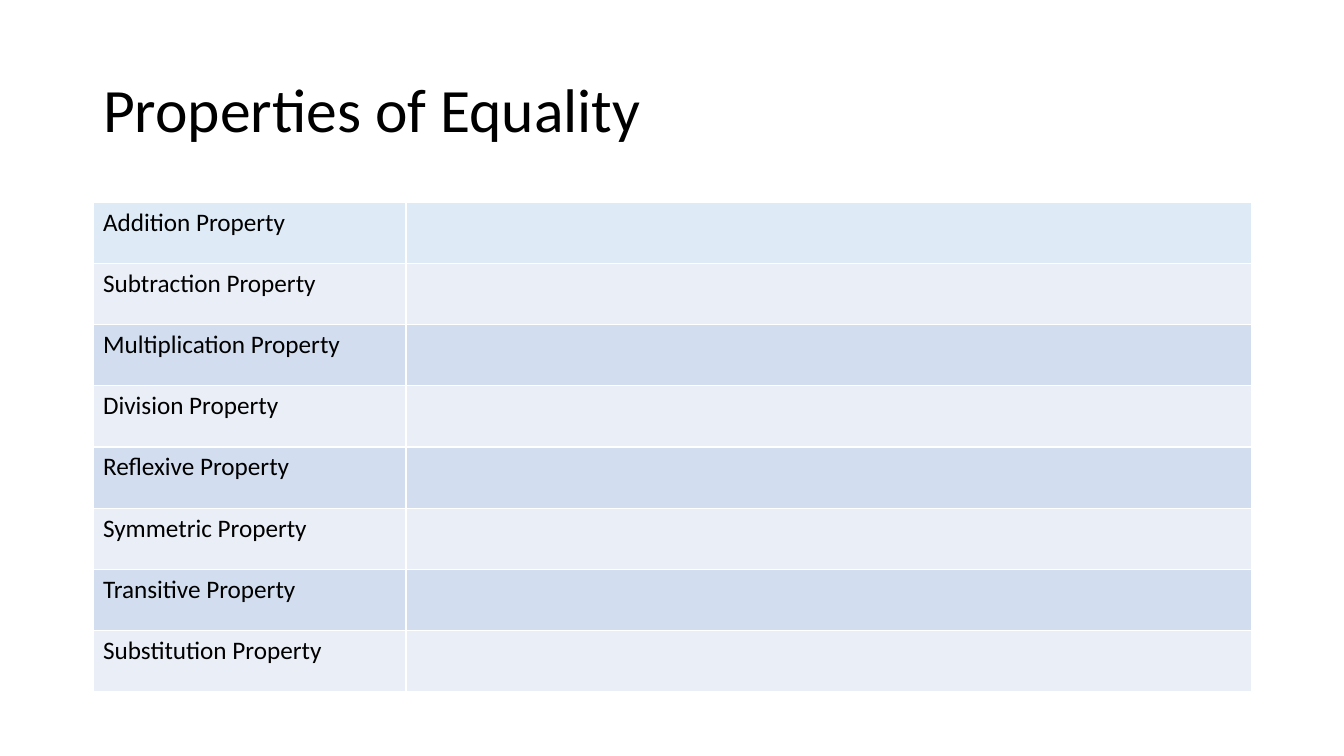
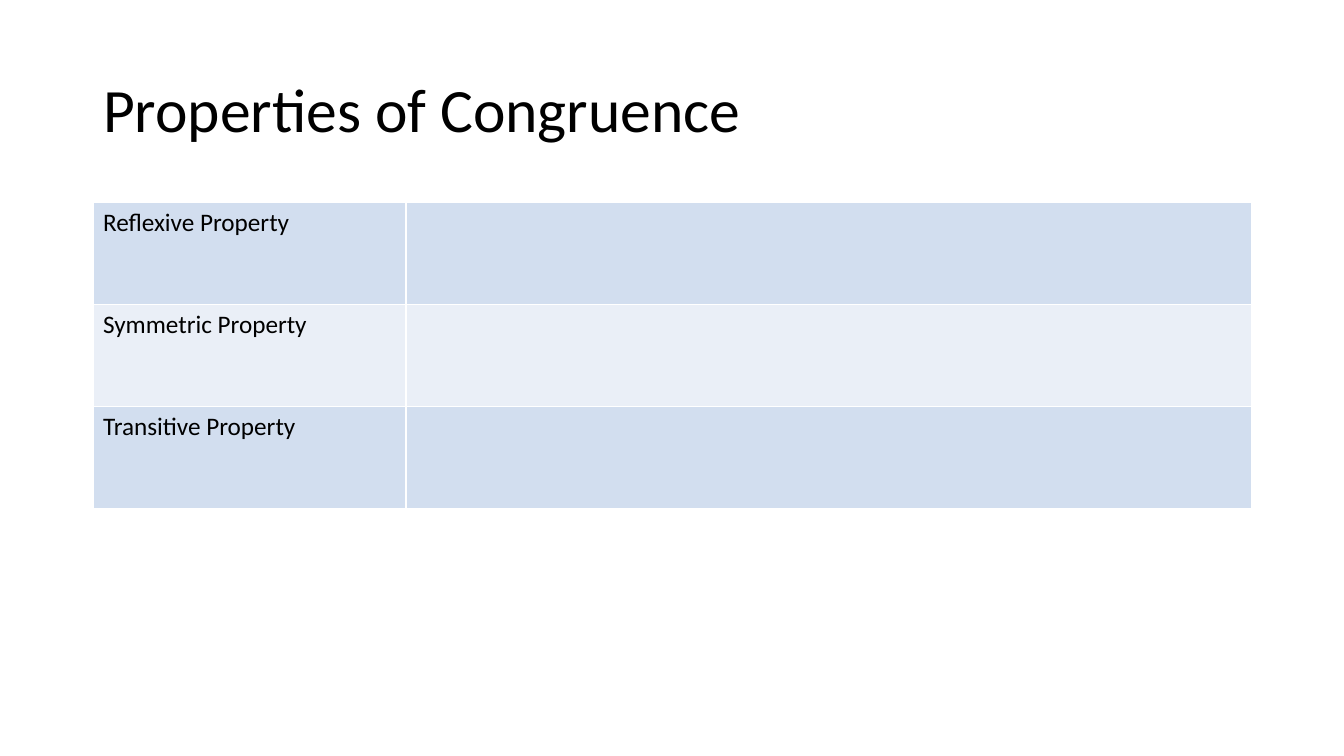
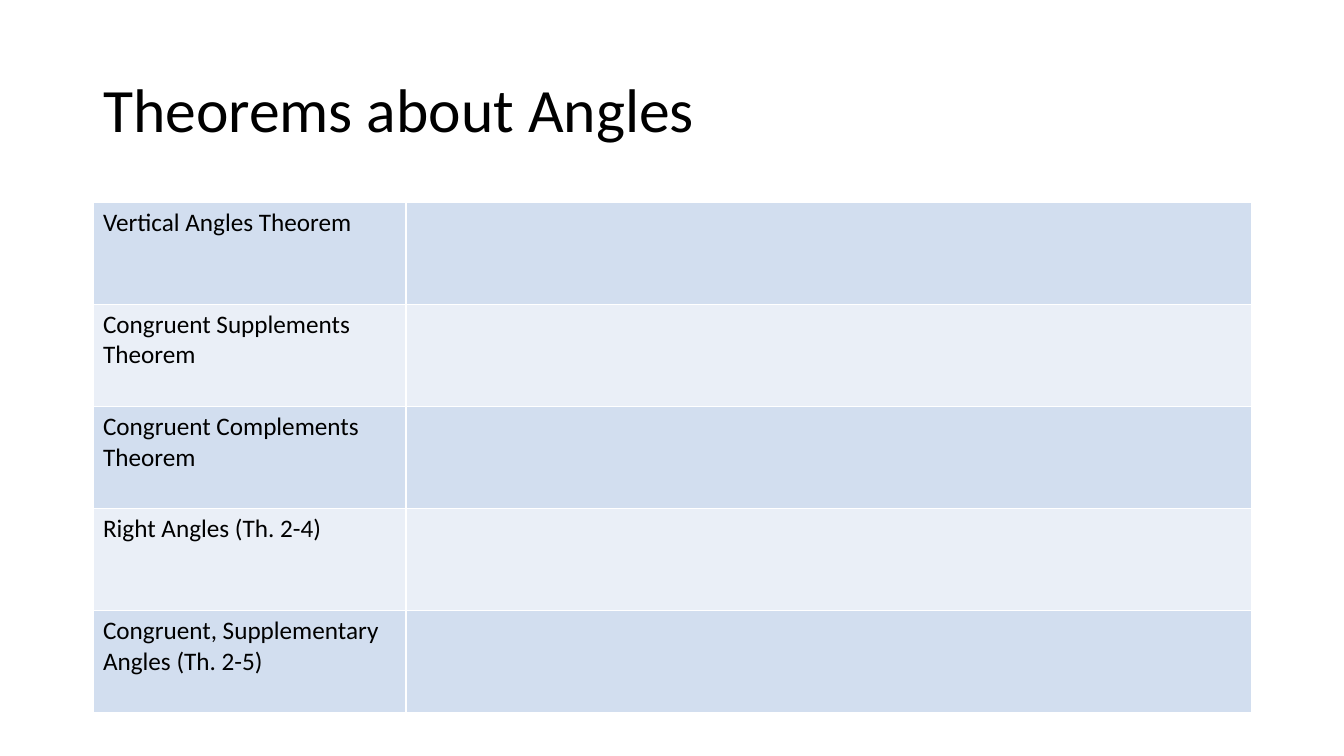
from dataclasses import dataclass

from lxml import etree
from pptx import Presentation
from pptx.dml.color import RGBColor
from pptx.enum.text import MSO_ANCHOR, PP_ALIGN
from pptx.oxml.ns import qn
from pptx.util import Pt

LEFT = PP_ALIGN.LEFT
MIDDLE = MSO_ANCHOR.MIDDLE
TITLE_ONLY = 5


@dataclass(frozen=True)
class Theme:
    font: str = "Calibri"
    text: str = "000000"
    border: str = "FFFFFF"
    accent: str = "DEEBF7"
    bands: tuple = ("D2DEEF", "EAEFF7")
    title_size: int = 44
    cell_size: int = 18
    border_width: int = 1


THEME = Theme()


def px(n):
    """Turn pixels, at 1344 to the slide width, into EMU."""
    return round(n * 914400 / 100.8)


def style_text(p, size):
    p.alignment = LEFT
    p.font.name = THEME.font
    p.font.size = Pt(size)
    p.font.color.rgb = RGBColor.from_string(THEME.text)


LEFT_EDGE = 93
TITLE_TOP, TITLE_HEIGHT = 40, 146
TABLE_TOP = 202
COLUMNS = (313, 846)
WIDTH = sum(COLUMNS)

# Title, table height, fill of the first row, row names
SLIDES = [
    ("Properties of Equality", 490, THEME.accent, [
        "Addition Property",
        "Subtraction Property",
        "Multiplication Property",
        "Division Property",
        "Reflexive Property",
        "Symmetric Property",
        "Transitive Property",
        "Substitution Property",
    ]),
    ("Properties of Congruence", 307, THEME.bands[0], [
        "Reflexive Property",
        "Symmetric Property",
        "Transitive Property",
    ]),
    ("Theorems about Angles", 511, THEME.bands[0], [
        "Vertical Angles Theorem",
        "Congruent Supplements Theorem",
        "Congruent Complements Theorem",
        "Right Angles (Th. 2-4)",
        "Congruent, Supplementary Angles (Th. 2-5)",
    ]),
]

prs = Presentation()
prs.slide_width, prs.slide_height = px(1344), px(756)

for title, height, first_fill, names in SLIDES:
    s = prs.slides.add_slide(prs.slide_layouts[TITLE_ONLY])

    sp = s.shapes.title
    sp.left, sp.top = px(LEFT_EDGE), px(TITLE_TOP)
    sp.width, sp.height = px(WIDTH), px(TITLE_HEIGHT)
    tf = sp.text_frame
    tf.text = title
    tf.vertical_anchor = MIDDLE
    p = tf.paragraphs[0]
    p.line_spacing = 0.9
    style_text(p, THEME.title_size)

    table = s.shapes.add_table(len(names), len(COLUMNS), px(LEFT_EDGE), px(TABLE_TOP),
                               px(WIDTH), px(height)).table
    table.first_row = table.horz_banding = False
    for column, width in zip(table.columns, COLUMNS):
        column.width = px(width)

    for i, name in enumerate(names):
        table.cell(i, 0).text = name
        fill = first_fill if i == 0 else THEME.bands[i % 2]
        for cell in table.rows[i].cells:
            style_text(cell.text_frame.paragraphs[0], THEME.cell_size)
            tc_pr = cell._tc.get_or_add_tcPr()
            for side in ("a:lnL", "a:lnR", "a:lnT", "a:lnB"):
                ln = etree.SubElement(tc_pr, qn(side), w=str(Pt(THEME.border_width)))
                solid = etree.SubElement(ln, qn("a:solidFill"))
                etree.SubElement(solid, qn("a:srgbClr"), val=THEME.border)
            cell.fill.solid()
            cell.fill.fore_color.rgb = RGBColor.from_string(fill)

prs.save("out.pptx")
